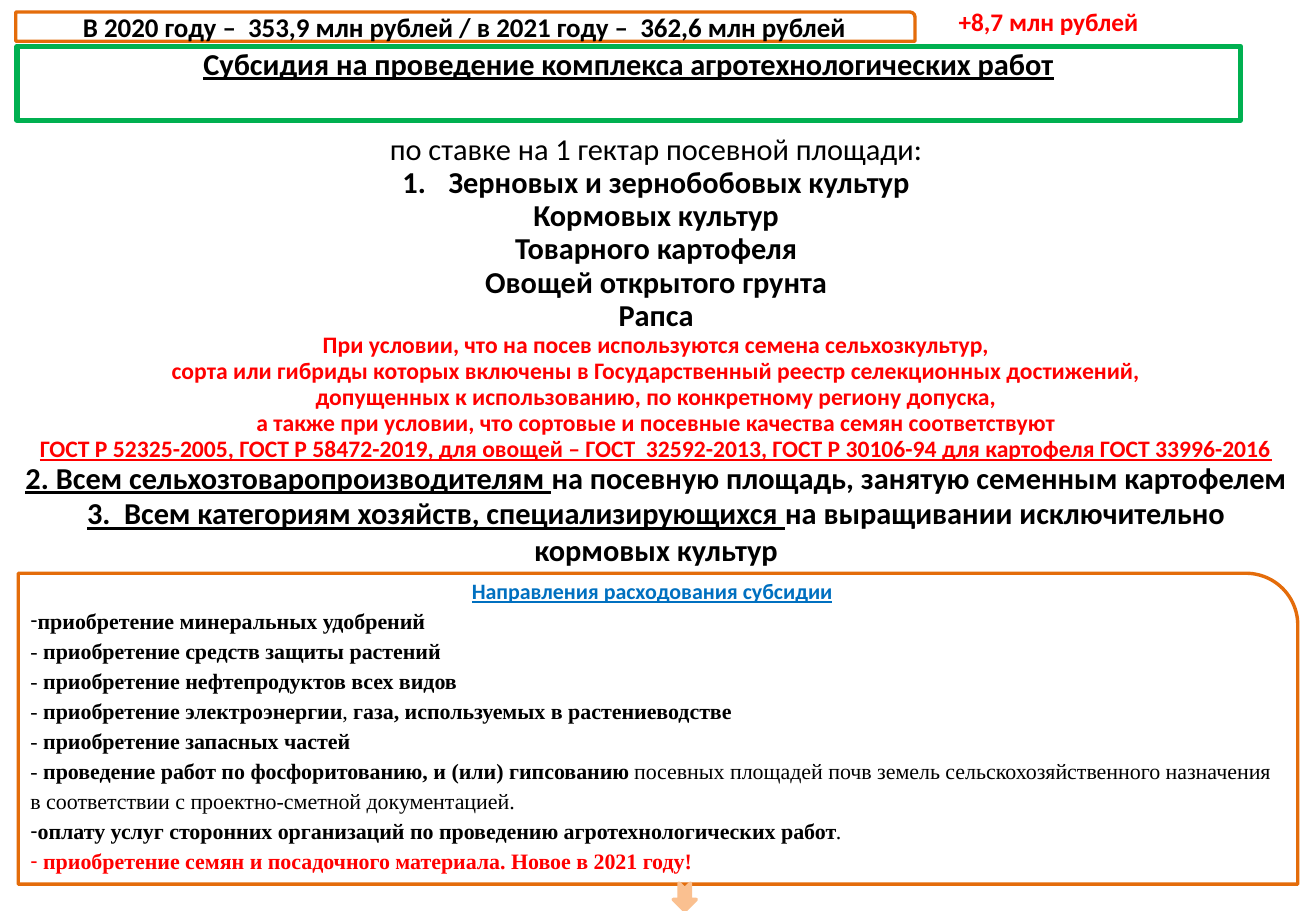
from dataclasses import dataclass

from lxml import etree
from pptx import Presentation
from pptx.dml.color import RGBColor
from pptx.enum.shapes import MSO_SHAPE
from pptx.enum.text import MSO_ANCHOR, MSO_AUTO_SIZE, PP_ALIGN
from pptx.oxml.ns import qn
from pptx.util import Inches, Pt

CENTER, LEFT = PP_ALIGN.CENTER, PP_ALIGN.LEFT
TOP, MIDDLE = MSO_ANCHOR.TOP, MSO_ANCHOR.MIDDLE
NO_FIT = MSO_AUTO_SIZE.NONE
ROUND_CORNER = MSO_SHAPE.ROUND_1_RECTANGLE
NOTCHED_ARROW = MSO_SHAPE.NOTCHED_RIGHT_ARROW
SLIDE_WIDTH, SLIDE_HEIGHT = Inches(10.83), Inches(7.5)


@dataclass(frozen=True)
class Theme:
    black: str = "000000"
    white: str = "FFFFFF"
    red: str = "FF0000"
    blue: str = "0070C0"
    green: str = "00B050"
    orange: str = "E46C0A"
    peach: str = "FAC090"
    sans: str = "Calibri"
    serif: str = "Times New Roman"
    heading: int = 18
    budget: int = 16
    growth: int = 15
    condition: int = 14
    detail: int = 13
    thin: int = 2
    thick: int = 3


THEME = Theme()


@dataclass(frozen=True)
class Area:
    """Percentages of the slide's width and height."""

    x: float
    y: float
    w: float
    h: float

    def box(self) -> tuple[int, int, int, int]:
        return (
            int(SLIDE_WIDTH * self.x / 100),
            int(SLIDE_HEIGHT * self.y / 100),
            int(SLIDE_WIDTH * self.w / 100),
            int(SLIDE_HEIGHT * self.h / 100),
        )


@dataclass(frozen=True)
class Span:
    text: str
    bold: bool = True
    underline: bool = False


@dataclass(frozen=True)
class Line:
    spans: tuple[Span, ...]
    size: int = THEME.heading
    color: str = THEME.black
    font: str = THEME.sans
    align: PP_ALIGN = CENTER
    spacing: float = 1.0
    bullet: str = ""
    numbered: bool = False


def crop(name: str, numbered: bool = False) -> Line:
    return Line((Span(name),), spacing=0.9, numbered=numbered)


def condition(text: str, underline: bool = False) -> Line:
    return Line((Span(text, underline=underline),), THEME.condition, THEME.red, spacing=0.9)


def expense(*spans: Span, bullet: str = "", color: str = THEME.black) -> Line:
    lead = () if bullet else (Span("- ", bold=False),)
    return Line(lead + spans, THEME.detail, color, THEME.serif, LEFT, 1.14, bullet)


BUDGET = [Line((Span("В 2020 году –  353,9 млн рублей / в 2021 году –  362,6 млн рублей"),), THEME.budget)]
GROWTH = [Line((Span("+8,7 млн рублей"),), THEME.growth, THEME.red, align=LEFT)]
SUBSIDY = [Line((Span("Субсидия на проведение комплекса агротехнологических работ", underline=True),), spacing=0.8)]
RATES = [
    Line((Span("по ставке на 1 гектар посевной площади:", bold=False),), spacing=0.85),
    crop("Зерновых и зернобобовых культур", numbered=True),
    crop("Кормовых культур"),
    crop("Товарного картофеля"),
    crop("Овощей открытого грунта"),
    crop("Рапса"),
    condition("При условии, что на посев используются семена сельхозкультур,"),
    condition("сорта или гибриды которых включены в Государственный реестр селекционных достижений,"),
    condition("допущенных к использованию, по конкретному региону допуска,"),
    condition("а также при условии, что сортовые и посевные качества семян соответствуют"),
    condition(
        "ГОСТ Р 52325-2005, ГОСТ Р 58472-2019, для овощей – ГОСТ  32592-2013, "
        "ГОСТ Р 30106-94 для картофеля ГОСТ 33996-2016",
        underline=True,
    ),
    Line(
        (
            Span("2. Всем сельхозтоваропроизводителям ", underline=True),
            Span("на посевную площадь, занятую семенным картофелем"),
        ),
        spacing=0.9,
    ),
    Line(
        (
            Span("3.  Всем категориям хозяйств, специализирующихся ", underline=True),
            Span("на выращивании исключительно кормовых культур"),
        )
    ),
]
DIRECTIONS = [
    Line((Span("Направления расходования субсидии", underline=True),), THEME.detail, THEME.blue, spacing=0.75),
    expense(Span("приобретение минеральных удобрений"), bullet="-"),
    expense(Span("приобретение средств защиты растений")),
    expense(Span("приобретение нефтепродуктов всех видов")),
    expense(
        Span("приобретение электроэнергии"),
        Span(", ", bold=False),
        Span("газа, используемых в растениеводстве"),
    ),
    expense(Span("приобретение запасных частей")),
    expense(
        Span("проведение работ по фосфоритованию, и (или) гипсованию "),
        Span(
            "посевных площадей почв земель сельскохозяйственного назначения "
            "в соответствии с проектно-сметной документацией.",
            bold=False,
        ),
    ),
    expense(
        Span("оплату услуг сторонних организаций по проведению агротехнологических работ"),
        Span(".", bold=False),
        bullet="-",
    ),
    expense(Span(" приобретение семян и посадочного материала. Новое в 2021 году!"), bullet="-", color=THEME.red),
]


def set_bullet(paragraph, line: Line) -> None:
    properties = paragraph._p.get_or_add_pPr()
    hang = Inches(0.38) if line.numbered else 0
    properties.set("marL", str(hang))
    properties.set("indent", str(-hang))
    if line.numbered:
        etree.SubElement(properties, qn("a:buFont"), typeface="+mj-lt")
        etree.SubElement(properties, qn("a:buAutoNum"), type="arabicPeriod")
    elif line.bullet:
        etree.SubElement(properties, qn("a:buChar"), char=line.bullet)
    else:
        etree.SubElement(properties, qn("a:buNone"))


def write(frame, lines: list[Line], anchor: MSO_ANCHOR = TOP, wrap: bool = True) -> None:
    frame.word_wrap = wrap
    frame.auto_size = NO_FIT
    frame.vertical_anchor = anchor
    for index, line in enumerate(lines):
        paragraph = frame.add_paragraph() if index else frame.paragraphs[0]
        paragraph.alignment = line.align
        paragraph.line_spacing = line.spacing
        paragraph.space_before = Pt(0)
        set_bullet(paragraph, line)
        font = paragraph.font
        font.name, font.size = line.font, Pt(line.size)
        font.color.rgb = RGBColor.from_string(line.color)
        same = len({(span.bold, span.underline) for span in line.spans}) == 1
        for span in line.spans:
            run = paragraph.add_run()
            run.text = span.text
            target = font if same else run.font
            target.bold, target.underline = span.bold, span.underline


def paint(shape, outline: str, width: int, fill: str = "") -> None:
    if fill:
        shape.fill.solid()
        shape.fill.fore_color.rgb = RGBColor.from_string(fill)
    else:
        shape.fill.background()
    shape.line.color.rgb = RGBColor.from_string(outline)
    shape.line.width = Pt(width)


def add_figure(slide, kind: MSO_SHAPE, area: Area, outline: str, fill: str = ""):
    figure = slide.shapes.add_shape(kind, *area.box())
    figure.shadow.inherit = False
    paint(figure, outline, THEME.thin, fill)
    return figure


def place(placeholder, area: Area) -> None:
    placeholder.left, placeholder.top, placeholder.width, placeholder.height = area.box()


def add_rates(slide, area: Area) -> None:
    table = slide.shapes.add_table(1, 1, *area.box()).table
    table.first_row = table.horz_banding = False
    cell = table.cell(0, 0)
    cell.fill.solid()
    cell.fill.fore_color.rgb = RGBColor.from_string(THEME.white)
    write(cell.text_frame, RATES)


def main() -> None:
    deck = Presentation()
    deck.slide_width, deck.slide_height = SLIDE_WIDTH, SLIDE_HEIGHT
    slide = deck.slides.add_slide(deck.slide_layouts[1])

    subsidy = slide.shapes.title
    place(subsidy, Area(1.29, 5.07, 92.98, 8.13))
    paint(subsidy, THEME.green, THEME.thick, THEME.white)
    write(subsidy.text_frame, SUBSIDY)

    directions = slide.placeholders[1]
    place(directions, Area(1.39, 62.93, 96.31, 34.13))
    write(directions.text_frame, DIRECTIONS, MIDDLE)

    add_rates(slide, Area(0.83, 14.13, 98.06, 47.87))
    budget = add_figure(slide, ROUND_CORNER, Area(1.2, 1.33, 68.33, 3.2), THEME.orange, THEME.white)
    write(budget.text_frame, BUDGET, MIDDLE)
    growth = slide.shapes.add_textbox(*Area(71.93, 0, 17.17, 4.67).box())
    write(growth.text_frame, GROWTH, wrap=False)
    add_figure(slide, ROUND_CORNER, Area(1.39, 62.93, 97.23, 34.13), THEME.orange)
    arrow = add_figure(slide, NOTCHED_ARROW, Area(50.97, 97.2, 2.12, 2.53), THEME.peach, THEME.peach)
    arrow.rotation = 90

    deck.save("out.pptx")


if __name__ == "__main__":
    main()
